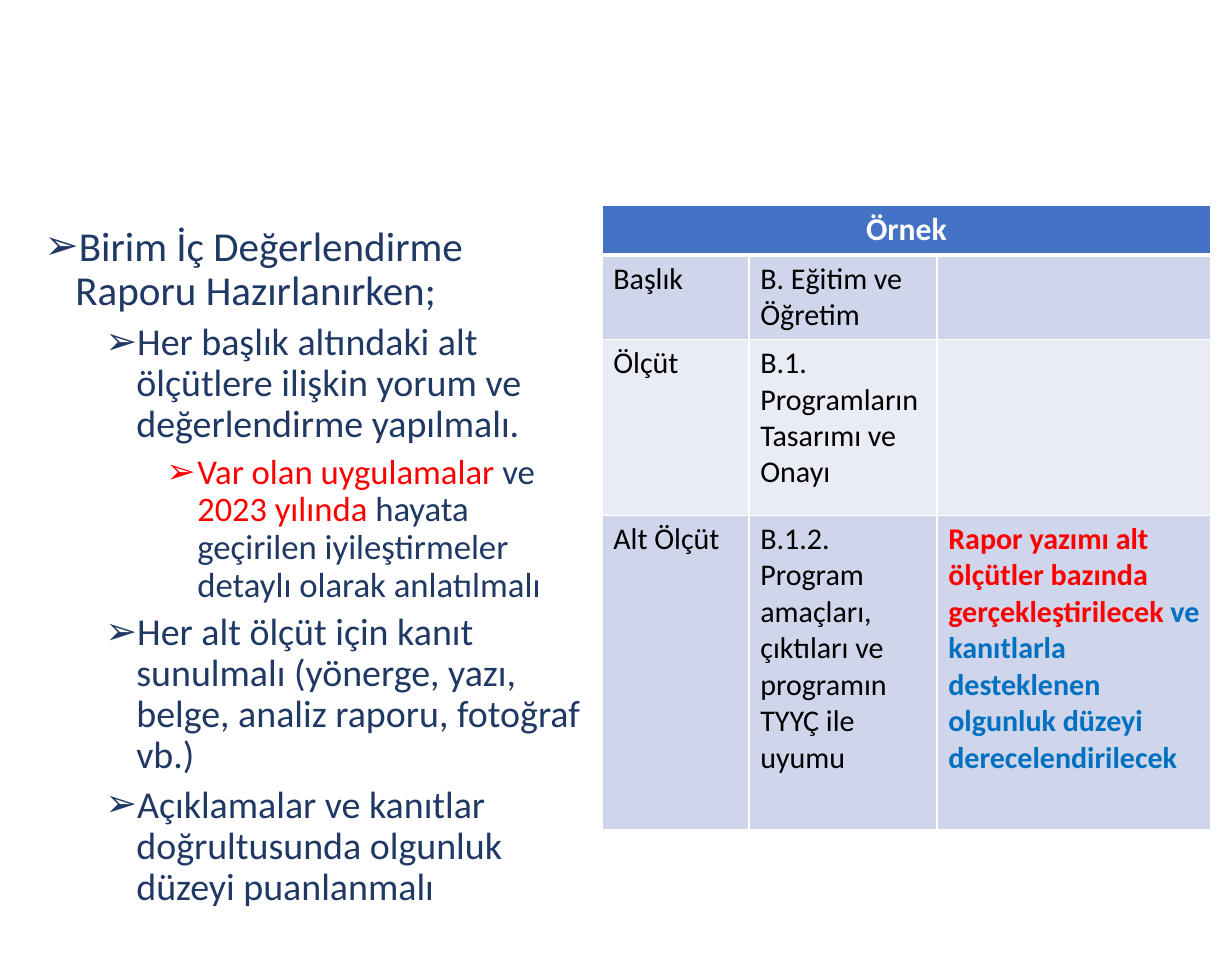
from dataclasses import dataclass
from typing import NamedTuple

from lxml.etree import SubElement as SubEl
from pptx import Presentation
from pptx.dml.color import RGBColor as Rgb
from pptx.enum.text import MSO_ANCHOR as Anchor, MSO_AUTO_SIZE as Fit, PP_ALIGN as Align
from pptx.oxml.ns import qn
from pptx.util import Emu, Pt

SCALE = 914400 / 113.8


@dataclass(frozen=True)
class Theme:
    font: str = "Calibri"
    white: str = "FFFFFF"
    black: str = "000000"
    navy: str = "203864"
    red: str = "FF0000"
    blue: str = "0070C0"
    head: str = "4472C4"
    bands: tuple = ("CFD5EA", "E9EBF5")
    levels: tuple = (26, 24, 22)
    year: float = 21.7
    title: int = 20
    cell: int = 19


T = Theme()


class Span(NamedTuple):
    text: str
    color: str
    size: float
    bold: bool = False


class Point(NamedTuple):
    level: int
    spans: list[Span]


def px(count: int) -> Emu:
    return Emu(round(count * SCALE))


def write(para, text: str, *, color: str, size: float, bold: bool = False) -> None:
    run = para.add_run()
    run.text = text
    font = run.font
    font.name, font.size, font.bold = T.font, Pt(size), bold
    font.color.rgb = Rgb.from_string(color)


def fill_para(para, spans: list[Span]) -> None:
    for span in spans:
        write(para, span.text, color=span.color, size=span.size, bold=span.bold)


def add_point(para, point: Point, first: bool) -> None:
    props = para._p.get_or_add_pPr()
    props.set("marL", str(px(31 + 61 * point.level)))
    props.set("indent", str(-px(31)))
    SubEl(props, qn("a:buFont"), typeface="Arial")
    SubEl(props, qn("a:buChar"), char="➢")
    para.level = point.level
    para.alignment = Align.LEFT
    para.line_spacing = 0.9
    para.space_before = Pt(0 if first else 5.4)
    para.space_after = Pt(0)
    fill_para(para, point.spans)


def add_edge(props, side: str, width: float) -> None:
    line = SubEl(props, qn(f"a:ln{side}"), w=str(Pt(width)))
    paint = SubEl(line, qn("a:solidFill"))
    SubEl(paint, qn("a:srgbClr"), val=T.white)


def style_cell(cell, row: int) -> None:
    props = cell._tc.get_or_add_tcPr()
    for side in "LRTB":
        thick = (row, side) in ((0, "B"), (1, "T"))
        add_edge(props, side, 3 if thick else 1)
    cell.fill.solid()
    cell.fill.fore_color.rgb = Rgb.from_string(T.bands[(row - 1) % 2] if row else T.head)


def plain(text: str) -> list[Span]:
    return [Span(text, T.black, T.cell)]


def note(level: int, text: str) -> Point:
    return Point(level, [Span(text, T.navy, T.levels[level])])


# Content
POINTS = [
    note(0, "Birim İç Değerlendirme Raporu Hazırlanırken;"),
    note(1, "Her başlık altındaki alt ölçütlere ilişkin yorum ve değerlendirme yapılmalı."),
    Point(2, [
        Span("Var olan uygulamalar ", T.red, T.levels[2]),
        Span("ve ", T.navy, T.levels[2]),
        Span("2023 ", T.red, T.year),
        Span("yılında ", T.red, T.levels[2]),
        Span("hayata geçirilen iyileştirmeler detaylı olarak anlatılmalı", T.navy, T.levels[2]),
    ]),
    note(1, "Her alt ölçüt için kanıt sunulmalı (yönerge, yazı, belge, analiz raporu, fotoğraf vb.)"),
    note(1, "Açıklamalar ve kanıtlar doğrultusunda olgunluk düzeyi puanlanmalı"),
]
ROWS = [
    [[Span("Örnek", T.white, T.title, True)], [], []],
    [plain("Başlık"), plain("B. Eğitim ve Öğretim"), []],
    [plain("Ölçüt"), plain("B.1. Programların Tasarımı ve Onayı"), []],
    [
        plain("Alt Ölçüt"),
        plain("B.1.2. Program amaçları, çıktıları ve programın TYYÇ ile uyumu"),
        [
            Span("Rapor yazımı alt ölçütler bazında gerçekleştirilecek ", T.red, T.cell, True),
            Span("ve kanıtlarla desteklenen olgunluk düzeyi derecelendirilecek", T.blue, T.cell, True),
        ],
    ],
]
WIDTHS = [147, 188, 274]
HEIGHTS = [49, 84, 176, 314]


def add_grid(slide) -> None:
    frame = slide.shapes.add_table(len(ROWS), len(WIDTHS), px(602), px(205),
                                   px(sum(WIDTHS)), px(sum(HEIGHTS)))
    table = frame.table
    for col, width in zip(table.columns, WIDTHS):
        col.width = px(width)
    for row, height in zip(table.rows, HEIGHTS):
        row.height = px(height)
    for r, line in enumerate(ROWS):
        for c, spans in enumerate(line):
            cell = table.cell(r, c)
            style_cell(cell, r)
            fill_para(cell.text_frame.paragraphs[0], spans)
    table.cell(0, 0).merge(table.cell(0, len(WIDTHS) - 1))
    table.cell(0, 0).text_frame.paragraphs[0].alignment = Align.CENTER


def add_list(body) -> None:
    body.left, body.top, body.width, body.height = map(px, (33, 220, 569, 696))
    frame = body.text_frame
    frame.word_wrap = True
    frame.auto_size = Fit.NONE
    frame.vertical_anchor = Anchor.TOP
    for i, point in enumerate(POINTS):
        para = frame.add_paragraph() if i else frame.paragraphs[0]
        add_point(para, point, i == 0)


def main() -> None:
    deck = Presentation()
    deck.slide_width, deck.slide_height = px(1232), px(964)
    slide = deck.slides.add_slide(deck.slide_layouts[1])
    # The slide has no title
    title = slide.shapes.title._element
    title.getparent().remove(title)
    # Table on the right, list on the left
    add_grid(slide)
    add_list(slide.placeholders[1])
    deck.save("out.pptx")


if __name__ == "__main__":
    main()
